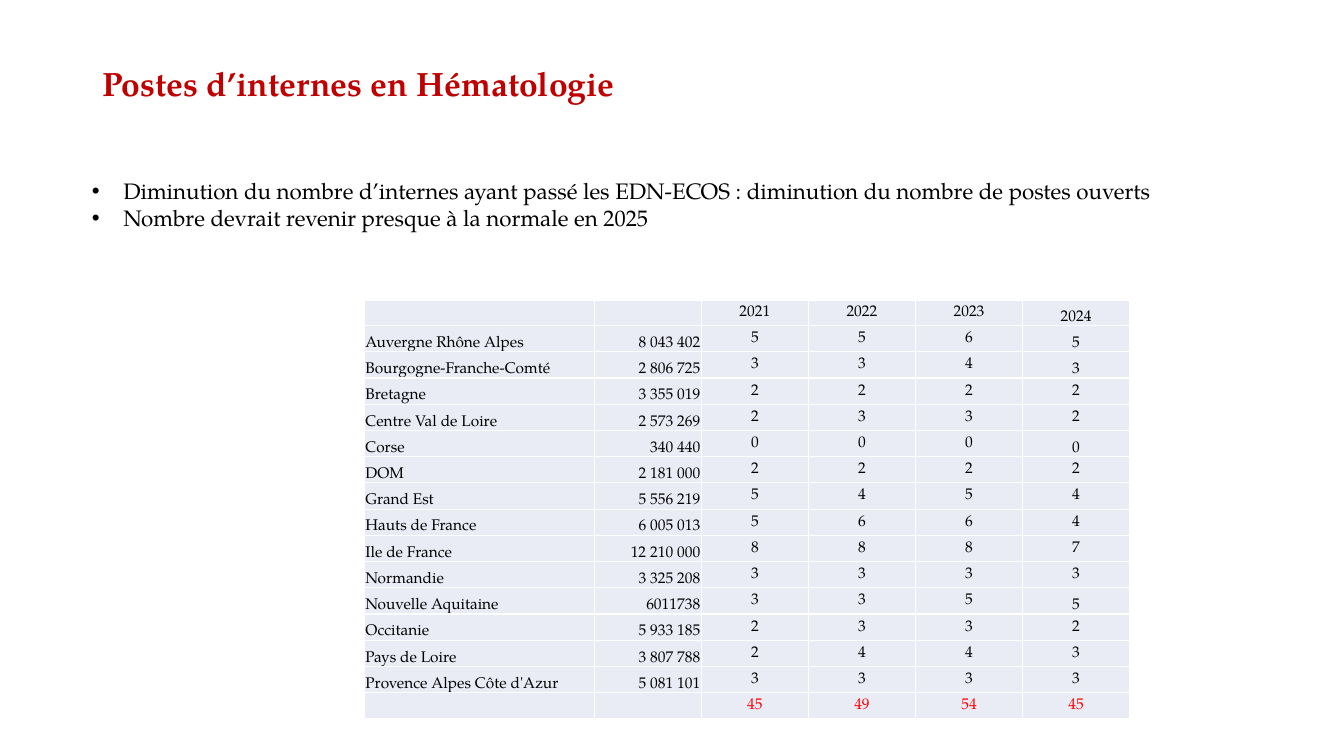
"""Build the slide on haematology resident posts by region."""
from dataclasses import dataclass

from lxml.etree import SubElement
from pptx import Presentation
from pptx.dml.color import RGBColor
from pptx.enum.text import MSO_ANCHOR as Anchor, MSO_AUTO_SIZE as AutoSize, PP_ALIGN as Align
from pptx.oxml.ns import qn
from pptx.util import Pt

PX = 9525
TITLE_ONLY = 5


@dataclass(frozen=True)
class Theme:
    font: str = "TeX Gyre Pagella"
    title_color: str = "C00000"
    text_color: str = "000000"
    total_color: str = "FF0000"
    cell_fill: str = "E9EBF5"
    border_color: str = "FFFFFF"
    title_size: int = 24
    body_size: int = 16
    table_size: int = 11


YEARS = ["2021", "2022", "2023", "2024"]
REGIONS = [
    ("Auvergne Rhône Alpes", 8043402, (5, 5, 6, 5)),
    ("Bourgogne-Franche-Comté", 2806725, (3, 3, 4, 3)),
    ("Bretagne", 3355019, (2, 2, 2, 2)),
    ("Centre Val de Loire", 2573269, (2, 3, 3, 2)),
    ("Corse", 340440, (0, 0, 0, 0)),
    ("DOM", 2181000, (2, 2, 2, 2)),
    ("Grand Est", 5556219, (5, 4, 5, 4)),
    ("Hauts de France", 6005013, (5, 6, 6, 4)),
    ("Ile de France", 12210000, (8, 8, 8, 7)),
    ("Normandie", 3325208, (3, 3, 3, 3)),
    ("Nouvelle Aquitaine", "6011738", (3, 3, 5, 5)),
    ("Occitanie", 5933185, (2, 3, 3, 2)),
    ("Pays de Loire", 3807788, (2, 4, 4, 3)),
    ("Provence Alpes Côte d'Azur", 5081101, (3, 3, 3, 3)),
]
TOTALS = ["45", "49", "54", "45"]
LOW_2024 = {"", "Auvergne Rhône Alpes", "Bourgogne-Franche-Comté", "Corse", "Nouvelle Aquitaine"}
BULLETS = [
    "Diminution du nombre d’internes ayant passé les EDN-ECOS : diminution du nombre de postes ouverts",
    "Nombre devrait revenir presque à la normale en 2025",
]


def population_text(population):
    """Group the digits of a number by thousands, keeping ready text as it is."""
    if isinstance(population, str):
        return population
    return f"{population:,}".replace(",", " ")


class SlideBuilder:
    """Hold the theme and the current slide, and add elements in px."""

    def __init__(self, presentation, theme):
        """Start a title-only slide."""
        self.theme = theme
        self.slide = presentation.slides.add_slide(presentation.slide_layouts[TITLE_ONLY])

    def format(self, paragraph, size, color, align=Align.LEFT, bold=False):
        """Set the font and alignment of a paragraph."""
        paragraph.alignment = align
        font = paragraph.font
        font.name, font.size, font.bold = self.theme.font, Pt(size), bold
        font.color.rgb = RGBColor.from_string(color)

    def title(self, text, left, top, width, height):
        """Place and format the title placeholder."""
        shape = self.slide.shapes.title
        shape.left, shape.top, shape.width, shape.height = (
            length * PX for length in (left, top, width, height))
        shape.text_frame.text = text
        shape.text_frame.vertical_anchor = Anchor.MIDDLE
        paragraph = shape.text_frame.paragraphs[0]
        paragraph.line_spacing = 0.9
        self.format(paragraph, self.theme.title_size, self.theme.title_color, bold=True)

    def bullets(self, lines, left, top, width, height, indent):
        """Add a text box with one bullet per line."""
        shape = self.slide.shapes.add_textbox(*(length * PX for length in (left, top, width, height)))
        frame = shape.text_frame
        frame.word_wrap = False
        frame.auto_size = AutoSize.SHAPE_TO_FIT_TEXT
        frame.text = "\n".join(lines)
        for paragraph in frame.paragraphs:
            properties = paragraph._p.get_or_add_pPr()
            properties.set("marL", str(indent * PX))
            properties.set("indent", str(-indent * PX))
            SubElement(properties, qn("a:buFont")).set("typeface", "Arial")
            SubElement(properties, qn("a:buChar")).set("char", "•")
            self.format(paragraph, self.theme.body_size, self.theme.text_color)

    def table(self, row_count, left, top, column_widths, row_heights):
        """Add an unbanded table and return it."""
        shape = self.slide.shapes.add_table(
            row_count, len(column_widths), left * PX, top * PX,
            sum(column_widths) * PX, sum(row_heights) * PX)
        table = shape.table
        table.first_row = table.horz_banding = False
        for column, width in zip(table.columns, column_widths):
            column.width = width * PX
        for row, height in zip(table.rows, row_heights):
            row.height = height * PX
        return table

    def cell(self, cell, text, color, align, anchor):
        """Fill, border and write one table cell."""
        cell.margin_left = cell.margin_right = cell.margin_top = PX
        cell.margin_bottom = 0
        cell.vertical_anchor = anchor
        cell.text = text
        paragraph = cell.text_frame.paragraphs[0]
        self.format(paragraph, self.theme.table_size, color, align)
        if not text:
            end = SubElement(paragraph._p, qn("a:endParaRPr"))
            end.set("sz", str(self.theme.table_size * 100))
        properties = cell._tc.get_or_add_tcPr()
        for side in ("lnL", "lnR", "lnT", "lnB"):
            line = SubElement(properties, qn(f"a:{side}"), w=str(Pt(1)))
            fill = SubElement(line, qn("a:solidFill"))
            SubElement(fill, qn("a:srgbClr"), val=self.theme.border_color)
        cell.fill.solid()
        cell.fill.fore_color.rgb = RGBColor.from_string(self.theme.cell_fill)

    def posts_table(self, left, top):
        """Add the table of posts per region and year."""
        rows = [["", "", *YEARS]]
        rows += [[region, population_text(population), *map(str, posts)]
                 for region, population, posts in REGIONS]
        rows.append(["", "", *TOTALS])
        last_row = len(rows) - 1
        table = self.table(len(rows), left, top, [219] + [102] * 5, [24] + [25] * last_row)
        aligns = [Align.LEFT, Align.RIGHT] + [Align.CENTER] * len(YEARS)
        for row_index, values in enumerate(rows):
            is_total = row_index == last_row
            color = self.theme.total_color if is_total else self.theme.text_color
            low_last = values[0] in LOW_2024 and not is_total
            for column_index, (text, align) in enumerate(zip(values, aligns)):
                is_last = column_index == len(values) - 1
                low = column_index < 2 or (is_last and low_last)
                self.cell(table.cell(row_index, column_index), text, color, align,
                          Anchor.BOTTOM if low else Anchor.MIDDLE)


def main():
    """Build and save the presentation."""
    presentation = Presentation()
    presentation.slide_width, presentation.slide_height = 1280 * PX, 720 * PX
    builder = SlideBuilder(presentation, Theme())
    builder.title("Postes d’internes en Hématologie", 88, 38, 1104, 88)
    builder.posts_table(347, 286)
    builder.bullets(BULLETS, 78, 164, 1044, 61, indent=30)
    presentation.save("out.pptx")


if __name__ == "__main__":
    main()
